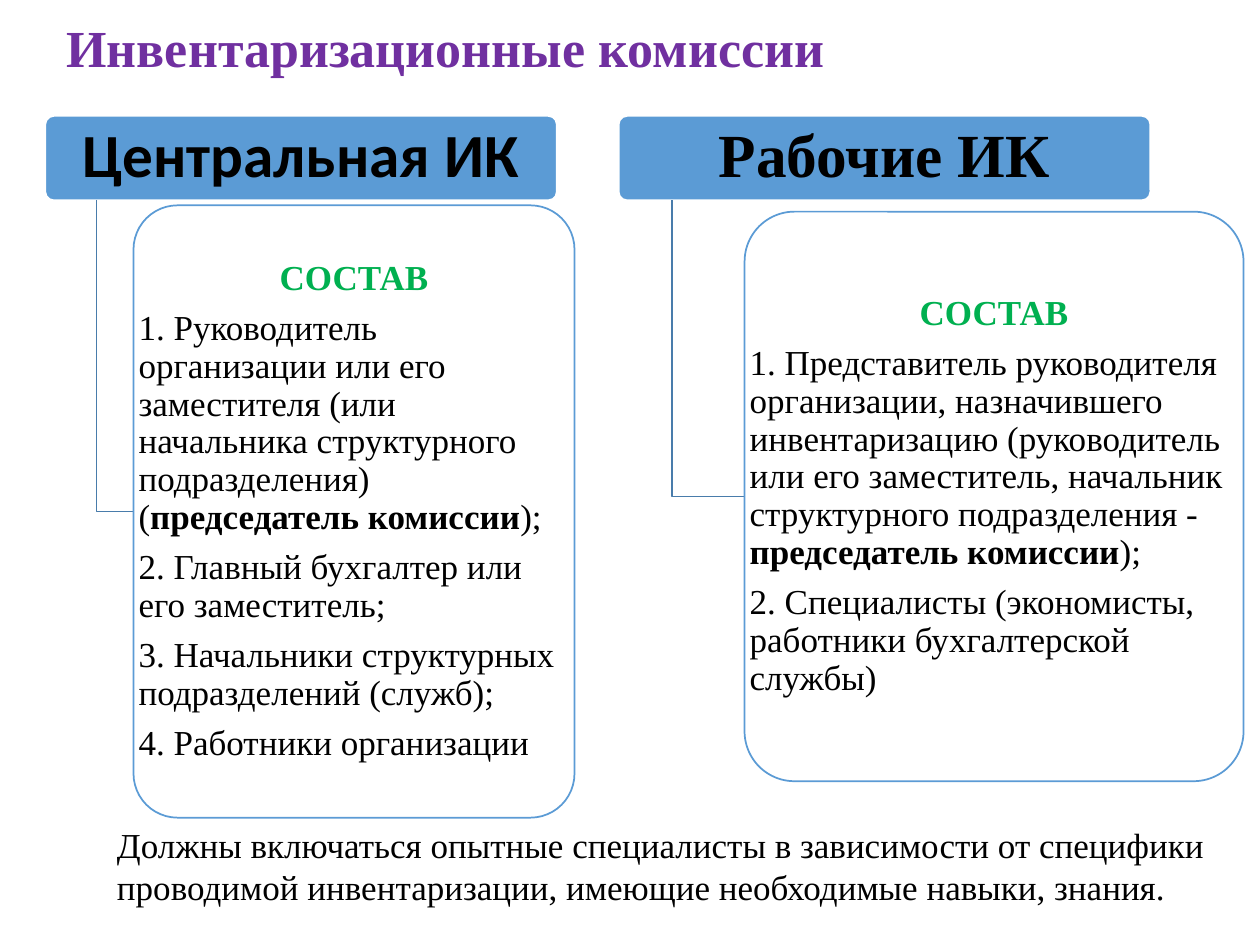
"""Build the slide about central and working inventory commissions."""
from lxml import etree
from pptx import Presentation
from pptx import util as u
from pptx.dml.color import RGBColor
from pptx.enum import shapes, text
from pptx.oxml.ns import qn

BLACK = RGBColor(0x00, 0x00, 0x00)
WHITE = RGBColor(0xFF, 0xFF, 0xFF)
BLUE = RGBColor(0x5B, 0x9B, 0xD5)
STEEL = RGBColor(0x49, 0x7C, 0xAB)
PURPLE = RGBColor(0x70, 0x30, 0xA0)
GREEN = RGBColor(0x00, 0xB0, 0x50)
SERIF, SANS = "Times New Roman", "Calibri"
CENTER, LEFT = text.PP_ALIGN.CENTER, text.PP_ALIGN.LEFT

TITLE = "Инвентаризационные комиссии"
SUBHEAD = "СОСТАВ"
CHAIR = ("председатель комиссии", True)
FOOTER = ("Должны включаться опытные специалисты в зависимости от специфики "
          "проводимой инвентаризации, имеющие необходимые навыки, знания.")
COMMISSIONS = [
    {"name": "Центральная ИК", "font": SANS,
     "header": (0.36, 0.92, 4.06, 0.67), "panel": (1.06, 1.63, 3.5, 4.86),
     "members": [
         [("1. Руководитель организации или его заместителя (или начальника "
           "структурного подразделения) (", False), CHAIR, (");", False)],
         [("2. Главный бухгалтер или его заместитель;", False)],
         [("3. Начальники структурных подразделений (служб);", False)],
         [("4. Работники организации", False)]]},
    {"name": "Рабочие ИК", "font": SERIF,
     "header": (4.91, 0.92, 4.22, 0.67), "panel": (5.91, 1.68, 3.96, 4.52),
     "members": [
         [("1. Представитель руководителя организации, назначившего "
           "инвентаризацию (руководитель или его заместитель, начальник "
           "структурного подразделения - ", False), CHAIR, (");", False)],
         [("2. Специалисты (экономисты, работники бухгалтерской службы)", False)]]},
]


def add_text(page, area, paragraphs, size, font=SERIF, margins=(0.1, 0.05),
             anchor=text.MSO_ANCHOR.MIDDLE, spacing=0.9, after=0):
    """Write paragraphs given as (alignment, colour, runs)."""
    frame = page.shapes.add_textbox(*map(u.Inches, area)).text_frame
    frame.word_wrap = True
    frame.vertical_anchor = anchor
    frame.margin_left = frame.margin_right = u.Inches(margins[0])
    frame.margin_top = frame.margin_bottom = u.Inches(margins[1])
    for index, (alignment, color, runs) in enumerate(paragraphs):
        para = frame.add_paragraph() if index else frame.paragraphs[0]
        para.alignment = alignment
        para.line_spacing = spacing
        para.space_after = u.Pt(after)
        for words, bold in runs:
            span = para.add_run()
            span.text = words
            span.font.name = font
            span.font.size = u.Pt(size)
            span.font.bold = bold
            span.font.color.rgb = color


def add_rounded(page, area, fill, line):
    box = page.shapes.add_shape(shapes.MSO_SHAPE.ROUNDED_RECTANGLE, *map(u.Inches, area))
    box.adjustments[0] = 0.1
    box.shadow.inherit = False
    box.fill.solid()
    box.fill.fore_color.rgb = fill
    box.line.color.rgb = line
    box.line.width = u.Pt(1)
    return box


def add_elbow(page, header, panel):
    """Link a header's underside to the middle of its panel's left edge."""
    x, top = header[0] + header[2] / 10, header[1] + header[3]
    middle = panel[1] + panel[3] / 2
    builder = page.shapes.build_freeform(u.Inches(x), u.Inches(top))
    corners = [(x, middle), (panel[0], middle)]
    builder.add_line_segments([tuple(map(u.Inches, c)) for c in corners], close=False)
    elbow = builder.convert_to_shape()
    elbow.shadow.inherit = False
    elbow.fill.background()
    elbow.line.color.rgb = STEEL
    elbow.line.width = u.Pt(1)


def add_commission(page, commission):
    header, panel = commission["header"], commission["panel"]
    add_rounded(page, header, BLUE, WHITE)
    add_text(page, header, [(CENTER, BLACK, [(commission["name"], True)])], 35,
             commission["font"], margins=(0.07, 0.05), after=12)
    add_elbow(page, header, panel)
    box = add_rounded(page, panel, WHITE, BLUE)
    color = box.fill._xPr.find(qn("a:solidFill"))[0]
    etree.SubElement(color, qn("a:alpha"), val="90000")
    members = [(LEFT, BLACK, runs) for runs in commission["members"]]
    add_text(page, panel, [(CENTER, GREEN, [(SUBHEAD, True)])] + members, 20,
             margins=(0.04, 0.03), after=7)


def main():
    deck = Presentation()
    deck.slide_width, deck.slide_height = u.Inches(10), u.Inches(7.5)
    page = deck.slides.add_slide(deck.slide_layouts[6])
    add_text(page, (0.43, 0.13, 9, 0.54), [(LEFT, PURPLE, [(TITLE, True)])], 29.7)
    for commission in COMMISSIONS:
        add_commission(page, commission)
    add_text(page, (0.83, 6.49, 8.98, 0.77), [(LEFT, BLACK, [(FOOTER, False)])], 20,
             anchor=text.MSO_ANCHOR.TOP, spacing=1.0)
    deck.save("out.pptx")


if __name__ == "__main__":
    main()
